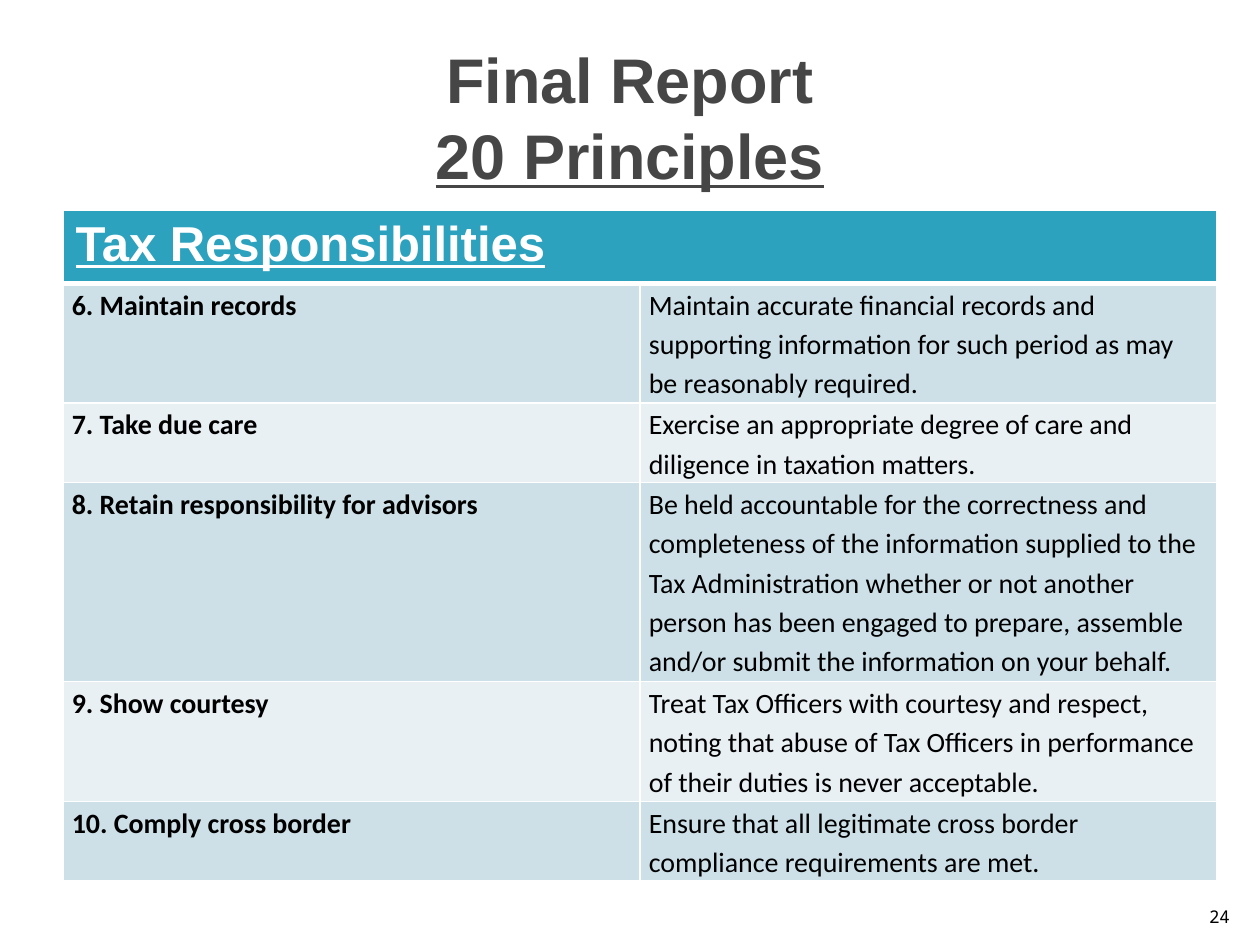
from lxml import etree
from pptx import Presentation
from pptx.dml.color import RGBColor
from pptx.enum.text import MSO_ANCHOR, PP_ALIGN
from pptx.oxml.ns import qn
from pptx.util import Inches, Pt

MIDDLE, BOTTOM = MSO_ANCHOR.MIDDLE, MSO_ANCHOR.BOTTOM
CENTER, RIGHT = PP_ALIGN.CENTER, PP_ALIGN.RIGHT
TITLE_ONLY = 5

HEADING = "Tax Responsibilities"
PRINCIPLES = [
    ("6. Maintain records",
     "Maintain accurate financial records and supporting information "
     "for such period as may be reasonably required.", 0.95),
    ("7. Take due care",
     "Exercise an appropriate degree of care and diligence in taxation matters.", 0.63),
    ("8. Retain responsibility for advisors",
     "Be held accountable for the correctness and completeness of the information "
     "supplied to the Tax Administration whether or not another person has been "
     "engaged to prepare, assemble and/or submit the information on your behalf.", 1.58),
    ("9. Show courtesy",
     "Treat Tax Officers with courtesy and respect, noting that abuse of Tax Officers "
     "in performance of their duties is never acceptable.", 0.95),
    ("10. Comply cross border",
     "Ensure that all legitimate cross border compliance requirements are met.", 0.63),
]
HEADING_HEIGHT = 0.58
BANDS = ["CDE0E8", "E8F0F4"]
TITLE_FONT = {"name": "Arial", "size": Pt(36), "bold": True}
HEADING_FONT = {"name": "Arial", "size": Pt(28), "bold": True, "underline": True}
BODY_FONT = {"name": "Calibri", "size": Pt(16)}
NUMBER_FONT = {"name": "Noto Sans Mono", "size": Pt(10)}
CELL_MARGINS = {"margin_left": Inches(0.07), "margin_right": Inches(0.07),
                "margin_top": 0, "margin_bottom": 0}


def set_color(color_format, value):
    color_format.rgb = RGBColor.from_string(value)


def set_attributes(target, values):
    for name, value in values.items():
        setattr(target, name, value)


def add_run(p, text, color, font):
    r = p.add_run()
    r.text = text
    set_attributes(r.font, font)
    set_color(r.font.color, color)


def place(shape, box):
    set_attributes(shape, dict(zip(("left", "top", "width", "height"), map(Inches, box))))


def set_borders(cell, top=1, bottom=1):
    tc_pr = cell._tc.get_or_add_tcPr()
    sides = {"lnL": 1, "lnR": 1, "lnT": top, "lnB": bottom}
    for i, (side, width) in enumerate(sides.items()):
        line = etree.Element(qn("a:" + side), w=str(Pt(width)))
        fill = etree.SubElement(line, qn("a:solidFill"))
        etree.SubElement(fill, qn("a:srgbClr"), val="FFFFFF")
        tc_pr.insert(i, line)


def fill_cell(cell, text, fill, color, font, top=1, bottom=1):
    cell.fill.solid()
    set_color(cell.fill.fore_color, fill)
    add_run(cell.text_frame.paragraphs[0], text, color, font)
    set_borders(cell, top, bottom)


def add_title(s, box):
    title = s.shapes.title
    place(title, box)
    tf = title.text_frame
    tf.vertical_anchor = MIDDLE
    p = tf.paragraphs[0]
    p.alignment = CENTER
    add_run(p, "Final Report", "464646", TITLE_FONT)
    p.add_line_break()
    add_run(p, "20 Principles", "464646", TITLE_FONT | {"underline": True})


def add_principles(s, box):
    table = s.shapes.add_table(len(PRINCIPLES) + 1, 2, *map(Inches, box)).table
    for column in table.columns:
        column.width = Inches(box[2] / 2)
    table.rows[0].height = Inches(HEADING_HEIGHT)
    table.cell(0, 0).merge(table.cell(0, 1))
    for col, text in enumerate((HEADING, "")):
        cell = table.cell(0, col)
        if text:
            fill_cell(cell, text, "2DA2BF", "FFFFFF", HEADING_FONT, bottom=3)
        else:
            set_borders(cell, bottom=3)
    for row, (name, duty, height) in enumerate(PRINCIPLES, 1):
        table.rows[row].height = Inches(height)
        for col, text in enumerate((name, duty)):
            cell = table.cell(row, col)
            set_attributes(cell, CELL_MARGINS)
            cell.text_frame.paragraphs[0].line_spacing = 1.15
            fill_cell(cell, text, BANDS[(row - 1) % 2], "000000",
                      BODY_FONT | {"bold": col == 0}, top=3 if row == 1 else 1)


def add_slide_number(s, box):
    tf = s.shapes.add_textbox(*map(Inches, box)).text_frame
    tf.word_wrap = True
    tf.vertical_anchor = BOTTOM
    p = tf.paragraphs[0]
    p.alignment = RIGHT
    add_run(p, "24", "000000", NUMBER_FONT)


def main():
    prs = Presentation()
    prs.slide_width, prs.slide_height = Inches(10), Inches(7.5)
    s = prs.slides.add_slide(prs.slide_layouts[TITLE_ONLY])
    add_title(s, (0.5, 0.3, 9, 1.25))
    add_principles(s, (0.5, 1.67, 9.16, 5.32))
    add_slide_number(s, (9.46, 7.01, 0.4, 0.4))
    prs.save("out.pptx")


if __name__ == "__main__":
    main()
